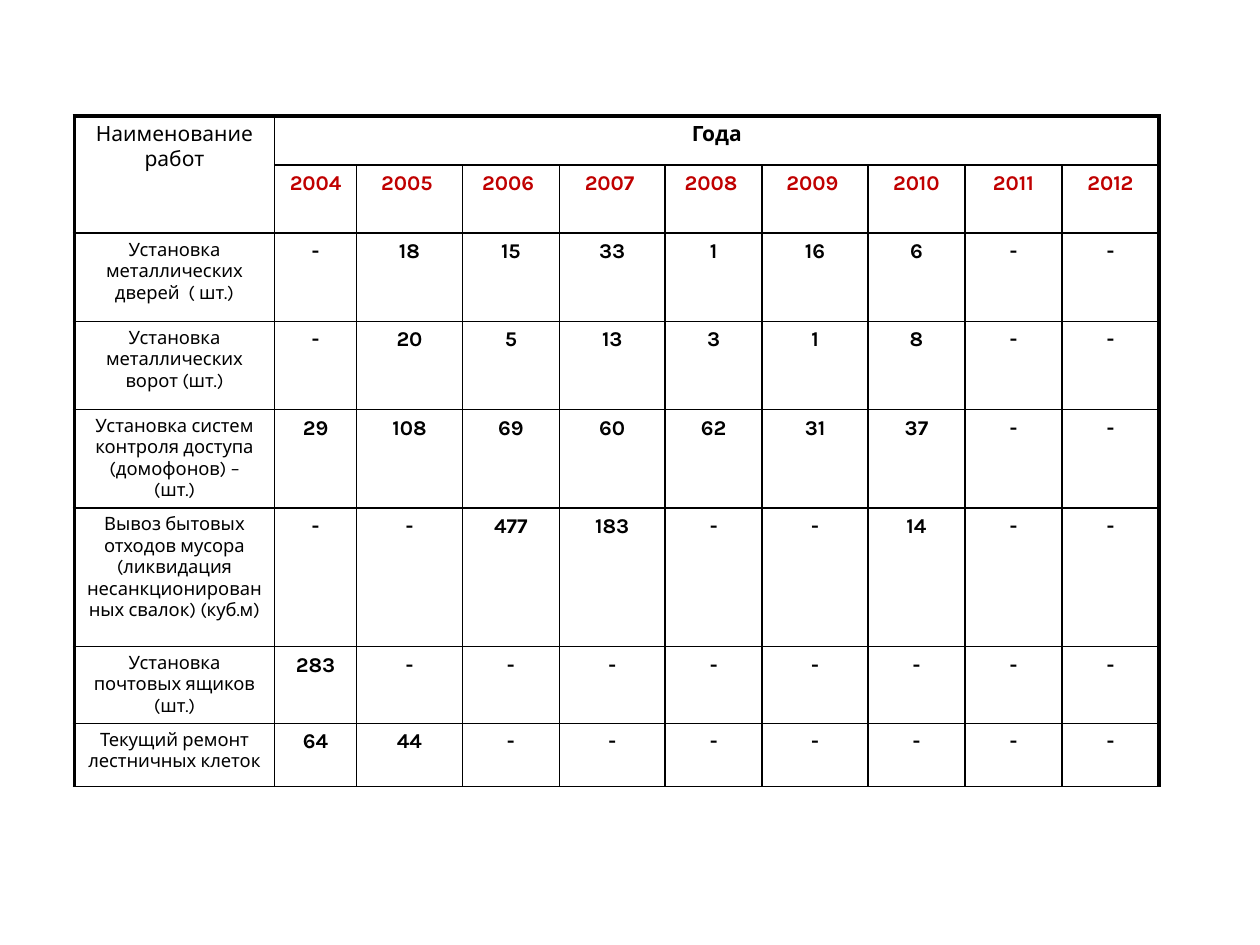
from lxml import etree
from pptx import Presentation
from pptx.dml.color import RGBColor
from pptx.enum.text import PP_ALIGN
from pptx.oxml.ns import qn
from pptx.util import Inches, Pt

CENTER = PP_ALIGN.CENTER
FONT, BLACK, RED = "Karla", "000000", "C00000"
THIN, THICK = 1, 2.25

YEARS = ["2004 ", "2005 ", "2006 ", "2007 ", "2008 ", "2009 ",
         "2010", "2011", "2012"]
WORKS = [
    ("Установка металлических дверей  ( шт.)", "- 18 15 33 1 16 6 - -"),
    ("Установка металлических ворот (шт.)", "- 20 5 13 3 1 8 - -"),
    ("Установка систем контроля доступа (домофонов) – (шт.)",
     "29 108 69 60 62 31 37 - -"),
    ("Вывоз бытовых отходов мусора (ликвидация несанкционированных свалок) "
     "(куб.м)", "- - 477 183 - - 14 - -"),
    ("Установка почтовых ящиков (шт.)", "283 - - - - - - - -"),
    ("Текущий ремонт лестничных клеток", "64 44 - - - - - - -"),
]
WIDTHS = [1.59, 0.65, 0.84, 0.77, 0.84, 0.77, 0.84, 0.77, 0.77, 0.77]
HEIGHTS = [0.39, 0.54, 0.7, 0.7, 0.78, 1.1, 0.61, 0.5]


def color(code):
    return RGBColor.from_string(code)


def put(cell, text, size=12, bold=True, ink=BLACK):
    par = cell.text_frame.paragraphs[0]
    par.text = text
    par.alignment = CENTER
    font = par.font
    font.name, font.size, font.bold = FONT, Pt(size), bold
    font.color.rgb = color(ink)


def border(cell, side, width):
    line = etree.SubElement(cell._tc.get_or_add_tcPr(), qn("a:ln" + side),
                            w=str(Pt(width)))
    fill = etree.SubElement(line, qn("a:solidFill"))
    etree.SubElement(fill, qn("a:srgbClr"), val=BLACK)


def frame(table):
    """Draw a thin grid with thick left, right and top edges."""
    last = len(WIDTHS) - 1
    for row in range(len(HEIGHTS)):
        for col in range(len(WIDTHS)):
            cell = table.cell(row, col)
            end = col + (cell.span_width if cell.is_merge_origin else 1) - 1
            border(cell, "L", THICK if col == 0 else THIN)
            border(cell, "R", THICK if end == last else THIN)
            border(cell, "T", THICK if row == 0 else THIN)
            border(cell, "B", THIN)
            cell.fill.background()


def main():
    prs = Presentation()
    prs.slide_width, prs.slide_height = Inches(10), Inches(7.5)
    slide = prs.slides.add_slide(prs.slide_layouts[6])
    table = slide.shapes.add_table(
        len(HEIGHTS), len(WIDTHS), Inches(0.59), Inches(0.92),
        Inches(sum(WIDTHS)), Inches(sum(HEIGHTS))).table
    table.first_row = table.horz_banding = False
    for col, width in zip(table.columns, WIDTHS):
        col.width = Inches(width)
    for row, height in zip(table.rows, HEIGHTS):
        row.height = Inches(height)

    table.cell(0, 0).merge(table.cell(1, 0))
    table.cell(0, 1).merge(table.cell(0, len(YEARS)))
    put(table.cell(0, 0), "Наименование работ", bold=False)
    put(table.cell(0, 1), "Года")
    for col, year in enumerate(YEARS, 1):
        put(table.cell(1, col), year, ink=RED)
    for row, (name, counts) in enumerate(WORKS, 2):
        put(table.cell(row, 0), name, size=10.5, bold=False)
        for col, count in enumerate(counts.split(), 1):
            put(table.cell(row, col), count)
    frame(table)
    prs.save("out.pptx")


if __name__ == "__main__":
    main()
